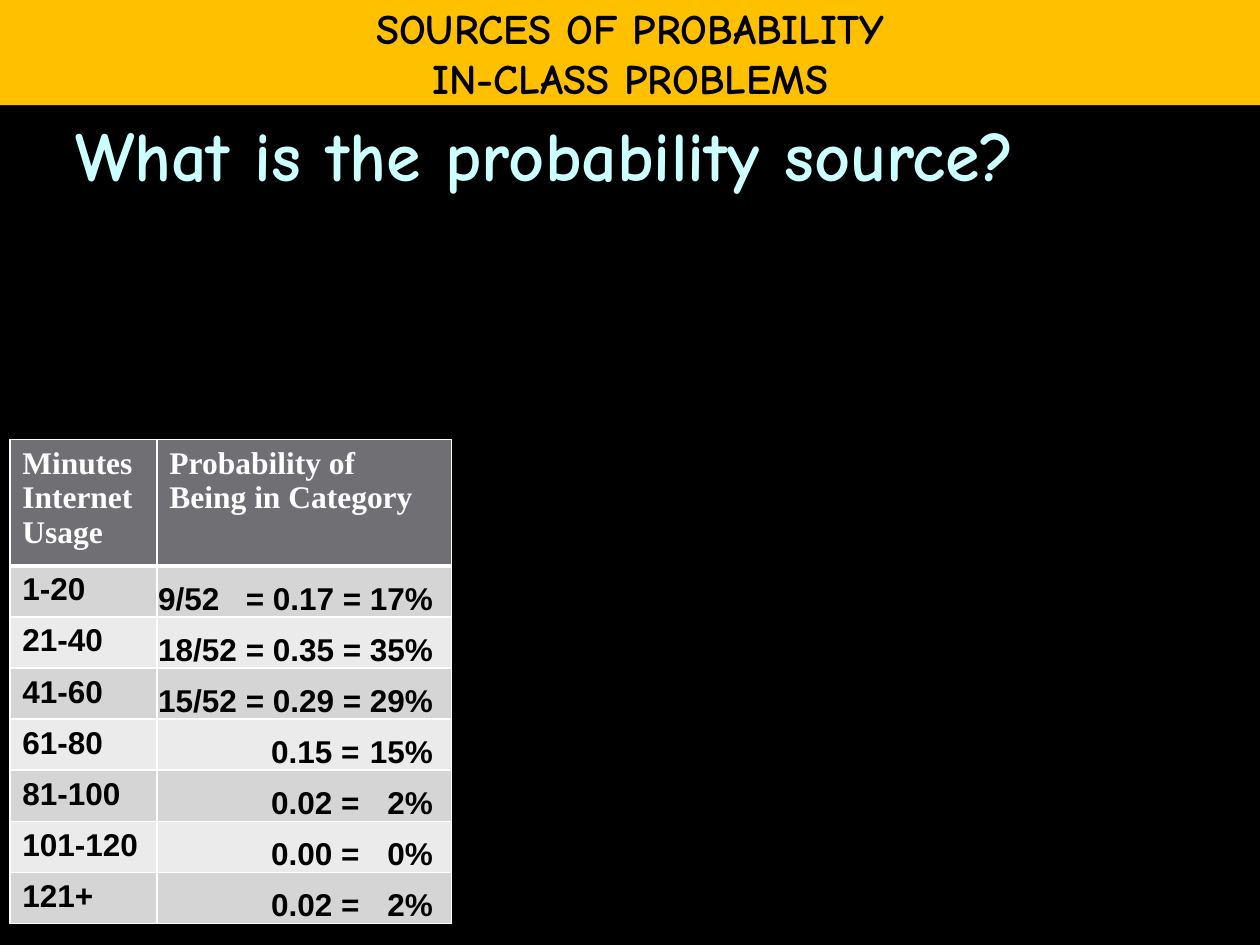
import pptx
import pptx.dml.color
import pptx.enum.text
import pptx.oxml
import pptx.oxml.ns
import pptx.util
from pptx.util import Cm

ANCHOR = pptx.enum.text.MSO_ANCHOR
ALIGN = pptx.enum.text.PP_ALIGN

HEADINGS = ["Minutes Internet Usage", "Probability of Being in Category"]
CATEGORIES = [
    ("1-20", "9/52\t= 0.17 =\t17%"),
    ("21-40", "18/52\t= 0.35 =\t35%"),
    ("41-60", "15/52\t= 0.29 =\t29%"),
    ("61-80", "\t\t0.15 =\t15%"),
    ("81-100", "\t\t0.02 =\t2%"),
    ("101-120", "\t\t0.00 =\t0%"),
    ("121+", "\t\t0.02 =\t2%"),
]
COLUMN_SHARES = [1 / 3, 2 / 3]
HEADER_HEIGHT = Cm(2.54)
# Equals sign, decimal and right-aligned percentage
TAB_STOPS = [(Cm(1.77), "l"), (Cm(2.28), "l"), (Cm(5.54), "r")]


def color(hex_string):
    return pptx.dml.color.RGBColor.from_string(hex_string)


def fill_solid(fill, hex_string):
    fill.solid()
    fill.fore_color.rgb = color(hex_string)


def format_paragraph(paragraph, size, name, hex_string, alignment=ALIGN.LEFT):
    paragraph.alignment = alignment
    font = paragraph.font
    font.size, font.name, font.bold = pptx.util.Pt(size), name, True
    font.color.rgb = color(hex_string)


def set_margins(target, left, top, right, bottom):
    target.margin_left, target.margin_top = Cm(left), Cm(top)
    target.margin_right, target.margin_bottom = Cm(right), Cm(bottom)


def make_element(tag, **attributes):
    element = pptx.oxml.parse_xml(f"<a:{tag} {pptx.oxml.ns.nsdecls('a')}/>")
    for key, value in attributes.items():
        element.set(key, str(value))
    return element


def set_borders(cell, hex_string, **widths):
    properties = cell._tc.get_or_add_tcPr()
    for index, side in enumerate("LRTB"):
        line = make_element(f"ln{side}", w=pptx.util.Pt(widths.get(side, 1)))
        solid = make_element("solidFill")
        solid.append(make_element("srgbClr", val=hex_string))
        line.append(solid)
        properties.insert(index, line)


def set_tab_stops(paragraph, stops):
    tab_list = make_element("tabLst")
    for position, alignment in stops:
        tab_list.append(make_element("tab", pos=position, algn=alignment))
    paragraph._p.get_or_add_pPr().insert(0, tab_list)


def add_banner(slide, left, top, width, height):
    title = slide.shapes.title
    title.left, title.top, title.width, title.height = left, top, width, height
    fill_solid(title.fill, "FFC000")
    frame = title.text_frame
    frame.text = "SOURCES OF PROBABILITY\nIN-CLASS PROBLEMS"
    frame.auto_size = pptx.enum.text.MSO_AUTO_SIZE.NONE
    frame.vertical_anchor = ANCHOR.MIDDLE
    frame.word_wrap = False
    for paragraph in frame.paragraphs:
        format_paragraph(paragraph, 24, "Comic Neue", "000000", ALIGN.CENTER)


def add_question(slide, left, top, width, height):
    frame = slide.shapes.add_textbox(left, top, width, height).text_frame
    frame.word_wrap = True
    frame.text = "What is the probability source?"
    paragraph = frame.paragraphs[0]
    paragraph.space_before = pptx.util.Pt(8)
    format_paragraph(paragraph, 40, "Comic Neue", "CCFFFF")


def add_probability_table(slide, left, top, width, height):
    rows = [HEADINGS, *CATEGORIES]
    table = slide.shapes.add_table(
        len(rows), len(HEADINGS), left, top, width, height).table
    for column, share in zip(table.columns, COLUMN_SHARES):
        column.width = int(width * share)
    for row_index, (row, texts) in enumerate(zip(table.rows, rows)):
        is_header = row_index == 0
        row.height = (HEADER_HEIGHT if is_header
                      else (height - HEADER_HEIGHT) // len(CATEGORIES))
        band = "6F6F74" if is_header else ("EBEBEC", "D5D5D6")[row_index % 2]
        for column_index, (cell, text) in enumerate(zip(row.cells, texts)):
            cell.text = text
            paragraph = cell.text_frame.paragraphs[0]
            if is_header:
                format_paragraph(paragraph, 18, "Times New Roman", "FFFFFF")
            else:
                format_paragraph(paragraph, 18, "Arial", "000000")
            # Probabilities sit on the cell floor and line up on tab stops
            if column_index == 1 and not is_header:
                set_margins(cell, 0.02, 0.02, 0.02, 0)
                cell.vertical_anchor = ANCHOR.BOTTOM
                set_tab_stops(paragraph, TAB_STOPS)
            else:
                set_margins(cell, 0.25, 0.13, 0.25, 0.13)
            fill_solid(cell.fill, band)
            set_borders(cell, "FFFFFF", T=3 if row_index == 1 else 1,
                        B=3 if is_header else 1)


def main():
    presentation = pptx.Presentation()
    presentation.slide_width, presentation.slide_height = Cm(25.4), Cm(19.05)
    slide = presentation.slides.add_slide(presentation.slide_layouts[5])
    fill_solid(slide.background.fill, "000000")

    banner_height = Cm(2.12)
    add_banner(slide, 0, 0, presentation.slide_width, banner_height)
    add_question(slide, Cm(1.27), banner_height, Cm(22.86), Cm(15.67))
    add_probability_table(slide, Cm(0.2), Cm(8.86), Cm(8.9), Cm(9.75))

    presentation.save("out.pptx")


if __name__ == "__main__":
    main()
